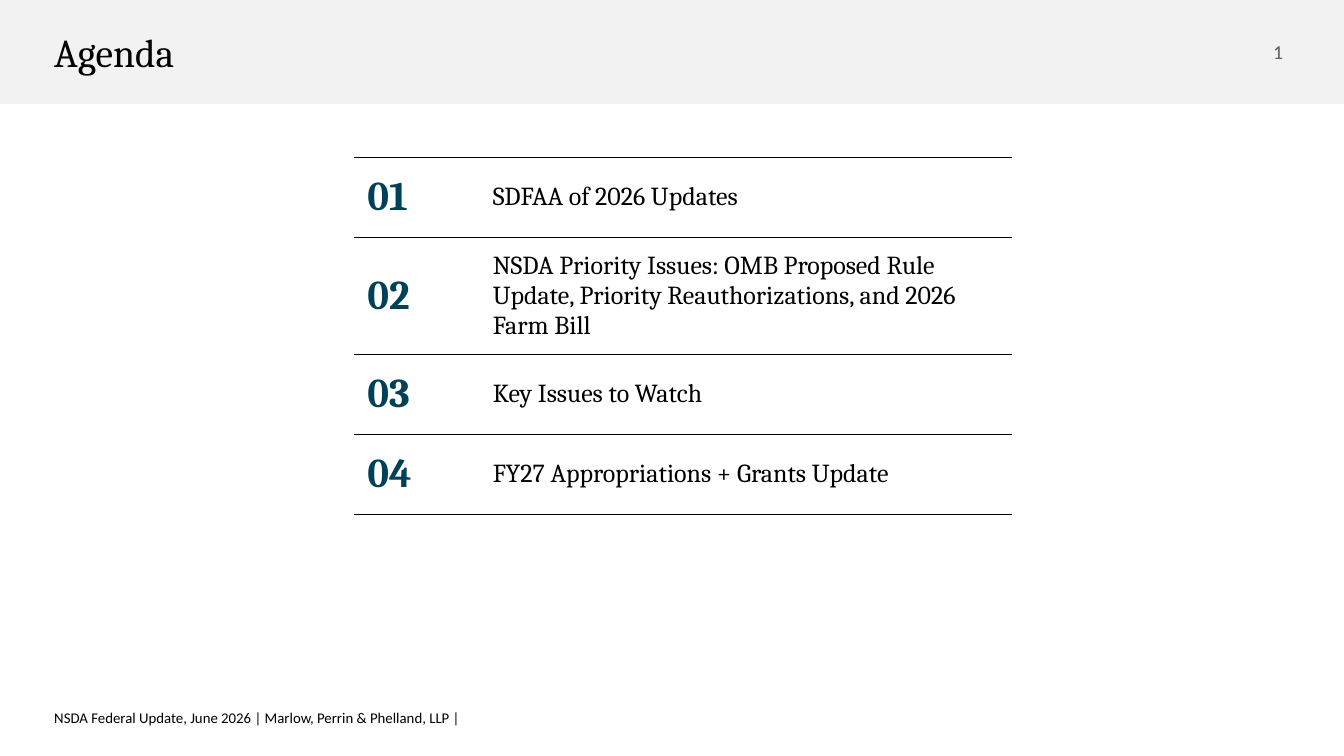
from dataclasses import dataclass

from lxml import etree
from pptx import Presentation
from pptx.dml.color import RGBColor
from pptx.enum.shapes import MSO_SHAPE
from pptx.enum.text import MSO_ANCHOR, PP_ALIGN
from pptx.oxml import parse_xml
from pptx.oxml.ns import nsdecls, qn
from pptx.slide import Slide
from pptx.table import _Cell
from pptx.text.text import TextFrame
from pptx.util import Inches, Pt

RECTANGLE = MSO_SHAPE.RECTANGLE
MIDDLE = MSO_ANCHOR.MIDDLE
LEFT, CENTER = PP_ALIGN.LEFT, PP_ALIGN.CENTER

TITLE_ONLY = 5
PAGE_WIDTH, PAGE_HEIGHT = 15.11, 8.5
HEADER_HEIGHT = 1.17
TABLE_LEFT, TABLE_TOP = 3.98, 1.77
COLUMN_WIDTHS = (1.41, 5.99)
ROW_HEIGHT = 0.9
CELL_MARGIN = 0.15
RULE_WIDTH = 0.5
NO_TABLE_STYLE = "{2D5ABB26-0587-4C30-8999-92F81FD0307C}"

COLORS = {
    "band": "F2F2F2",
    "text": "000000",
    "number": "004157",
    "page": "5C5E66",
}


@dataclass(frozen=True)
class TextStyle:
    font: str
    size: float
    color: str
    bold: bool = False
    align: PP_ALIGN = LEFT
    line_spacing: float = 1.0


@dataclass(frozen=True)
class Label:
    text: str
    bounds: tuple[float, float, float, float]
    margins: tuple[float, float, float, float]
    style: TextStyle
    wrap: bool = True


TITLE = Label("Agenda", (0.5, 0.26, 13.52, 0.65), (0.11, 0.06, 0.11, 0.06),
              TextStyle("Cambria", 32, "text"))
LABELS = (
    Label("1", (14.12, 0.26, 0.5, 0.65), (0, 0, 0, 0),
          TextStyle("Calibri", 16, "page", align=CENTER), wrap=False),
    Label("NSDA Federal Update, June 2026 | Marlow, Perrin & Phelland, LLP |",
          (0.5, 7.96, 12.64, 0.25), (0.11, 0, 0, 0),
          TextStyle("Calibri", 12, "text", line_spacing=0.8)),
)
NUMBER_STYLE = TextStyle("Cambria", 33, "number", bold=True)
TOPIC_STYLE = TextStyle("Cambria", 21, "text")
TOPICS = (
    "SDFAA of 2026 Updates",
    "NSDA Priority Issues: OMB Proposed Rule Update, "
    "Priority Reauthorizations, and 2026 Farm Bill",
    "Key Issues to Watch",
    "FY27 Appropriations + Grants Update",
)


def set_attributes(target: object, values: dict) -> None:
    for name, value in values.items():
        setattr(target, name, value)


def set_margins(target: object, margins: tuple[float, ...]) -> None:
    """Set left, top, right and bottom margins of a text frame or a cell."""
    sides = ("left", "top", "right", "bottom")
    set_attributes(target, {f"margin_{side}": Inches(margin)
                            for side, margin in zip(sides, margins)})


def write_text(frame: TextFrame, text: str, style: TextStyle) -> None:
    para = frame.paragraphs[0]
    set_attributes(para, {"alignment": style.align,
                          "line_spacing": style.line_spacing})
    span = para.add_run()
    span.text = text
    set_attributes(span.font, {"name": style.font, "size": Pt(style.size),
                               "bold": style.bold})
    span.font.color.rgb = RGBColor.from_string(COLORS[style.color])


def format_label(box: object, label: Label) -> None:
    """Place a text box or placeholder and fill in its text."""
    names = ("left", "top", "width", "height")
    set_attributes(box, dict(zip(names, map(Inches, label.bounds))))
    frame = box.text_frame
    set_attributes(frame, {"word_wrap": label.wrap, "vertical_anchor": MIDDLE})
    set_margins(frame, label.margins)
    write_text(frame, label.text, label.style)


def add_header_band(page: Slide) -> None:
    """Add the header band behind the title placeholder."""
    band = page.shapes.add_shape(RECTANGLE, 0, 0, Inches(PAGE_WIDTH),
                                 Inches(HEADER_HEIGHT))
    band.shadow.inherit = False
    band.fill.solid()
    band.fill.fore_color.rgb = RGBColor.from_string(COLORS["band"])
    band.line.fill.background()
    page.shapes.title._element.addprevious(band._element)


def add_rules(cell: _Cell) -> None:
    """Draw thin lines along the top and bottom of a cell."""
    properties = cell._tc.get_or_add_tcPr()
    for position, tag in enumerate(("lnT", "lnB")):
        rule = parse_xml(f'<a:{tag} {nsdecls("a")} w="{Pt(RULE_WIDTH)}"/>')
        fill = etree.SubElement(rule, qn("a:solidFill"))
        etree.SubElement(fill, qn("a:srgbClr"), val=COLORS["text"])
        properties.insert(position, rule)


def add_agenda(page: Slide) -> None:
    shape = page.shapes.add_table(
        len(TOPICS), len(COLUMN_WIDTHS), Inches(TABLE_LEFT), Inches(TABLE_TOP),
        Inches(sum(COLUMN_WIDTHS)), Inches(ROW_HEIGHT * len(TOPICS)))
    table = shape.table
    set_attributes(table, {"first_row": False, "horz_banding": False})
    table._tbl.tblPr.find(qn("a:tableStyleId")).text = NO_TABLE_STYLE
    for column, width in zip(table.columns, COLUMN_WIDTHS):
        column.width = Inches(width)
    for number, (row, topic) in enumerate(zip(table.rows, TOPICS), start=1):
        row.height = Inches(ROW_HEIGHT)
        entries = ((f"{number:02}", NUMBER_STYLE), (topic, TOPIC_STYLE))
        for cell, (text, style) in zip(row.cells, entries):
            cell.fill.background()
            cell.vertical_anchor = MIDDLE
            set_margins(cell, (CELL_MARGIN,) * 4)
            write_text(cell.text_frame, text, style)
            add_rules(cell)


def main() -> None:
    deck = Presentation()
    deck.slide_width = Inches(PAGE_WIDTH)
    deck.slide_height = Inches(PAGE_HEIGHT)
    page = deck.slides.add_slide(deck.slide_layouts[TITLE_ONLY])
    add_header_band(page)
    format_label(page.shapes.title, TITLE)
    add_agenda(page)
    for label in LABELS:
        box = page.shapes.add_textbox(*map(Inches, label.bounds))
        format_label(box, label)
    deck.save("out.pptx")


if __name__ == "__main__":
    main()
